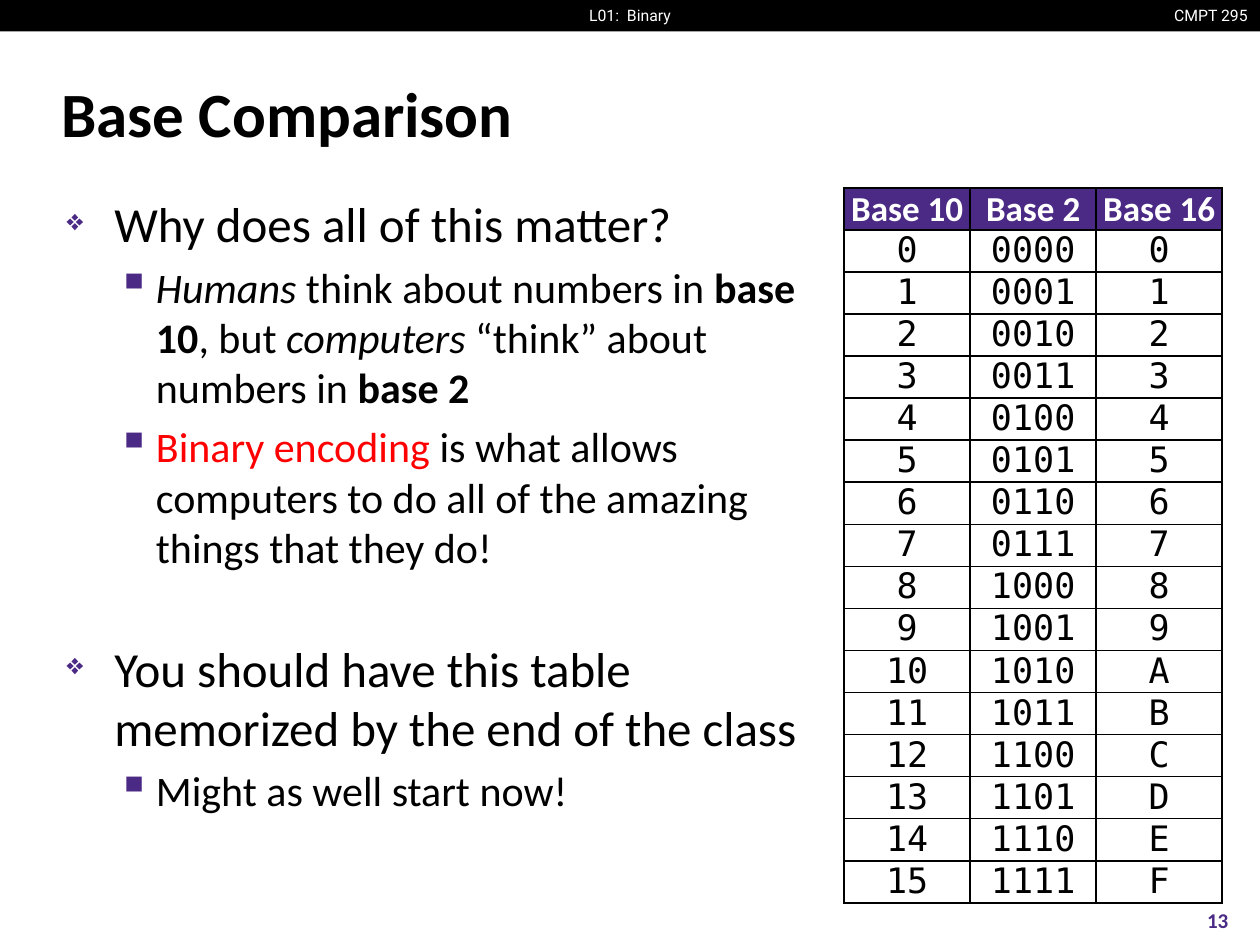
from typing import Any, NamedTuple, Optional

import lxml.etree
import pptx
import pptx.dml.color
import pptx.enum.shapes
import pptx.enum.text
import pptx.oxml.ns
import pptx.util

Inches, Pt = pptx.util.Inches, pptx.util.Pt
ALIGN, ANCHOR = pptx.enum.text.PP_ALIGN, pptx.enum.text.MSO_ANCHOR

PURPLE, BLACK, WHITE, RED = "4B2A85", "000000", "FFFFFF", "FF0000"
HEADER = dict(name="Roboto", size=9, color=WHITE)
TITLE = dict(name="Calibri", size=36, color=BLACK, bold=True)
PAGE = dict(name="Calibri", size=12, color=PURPLE, bold=True)
TABLE_HEAD = dict(name="Calibri", size=20, color=WHITE, bold=True)
TABLE_BODY = dict(name="DejaVu Sans Mono", size=20, color=BLACK, bold=False)
BOLD, ITALIC = dict(bold=True), dict(italic=True)


class Level(NamedTuple):
    margin: float
    hanging: float
    bullet: str
    bullet_pct: int
    size: int


class Item(NamedTuple):
    level: int
    runs: list[tuple[str, dict]]
    gap: Optional[float] = None


class Label(NamedTuple):
    text: str
    box: tuple[float, float, float, float]
    fmt: dict
    align: Any
    anchor: Any
    wrap: bool


LEVELS = [Level(0.38, 0.38, "❖", 60, 28), Level(0.71, 0.31, "▪", 110, 24)]

ITEMS = [
    Item(0, [("Why does all of this matter?", {})]),
    Item(1, [("Humans", ITALIC), (" think about numbers in ", {}),
             ("base 10", BOLD), (", but ", {}), ("computers", ITALIC),
             (" “think” about numbers in ", {}), ("base 2", BOLD)]),
    Item(1, [("Binary encoding ", dict(color=RED)),
             ("is what allows computers to do all of the amazing "
              "things that they do!", {})]),
    Item(0, [("You should have this table memorized by the end of the class",
              {})], gap=38),
    Item(1, [("Might as well start now!", {})]),
]

LABELS = [
    Label("CMPT 295", (9.19, 0, 0.81, 0.25), HEADER, ALIGN.RIGHT,
          ANCHOR.TOP, False),
    Label("L01:  Binary", (4.56, 0, 0.88, 0.25), HEADER, ALIGN.CENTER,
          ANCHOR.TOP, False),
    Label("Base Comparison", (0.39, 0.48, 9.19, 0.83), TITLE, ALIGN.LEFT,
          ANCHOR.MIDDLE, True),
    Label("13", (9.33, 7.1, 0.67, 0.4), PAGE, ALIGN.CENTER,
          ANCHOR.MIDDLE, True),
]


def rgb(value: str) -> pptx.dml.color.RGBColor:
    return pptx.dml.color.RGBColor.from_string(value)


def sub(parent: Any, tag: str, **attrs: Any) -> Any:
    """Append a DrawingML child element."""
    return lxml.etree.SubElement(parent, pptx.oxml.ns.qn(f"a:{tag}"),
                                 {k: str(v) for k, v in attrs.items()})


def add_run(p: Any, text: str, fmt: dict) -> None:
    r = p.add_run()
    r.text = text
    for key, value in fmt.items():
        if key == "color":
            r.font.color.rgb = rgb(value)
        else:
            setattr(r.font, key, Pt(value) if key == "size" else value)


def add_label(s: Any, label: Label) -> None:
    tf = s.shapes.add_textbox(*map(Inches, label.box)).text_frame
    tf.word_wrap, tf.vertical_anchor = label.wrap, label.anchor
    p = tf.paragraphs[0]
    p.alignment = label.align
    add_run(p, label.text, label.fmt)


def format_item(p: Any, item: Item) -> None:
    """Apply indents, spacing and bullet of the item's level."""
    level = LEVELS[item.level]
    p.level = item.level
    pPr = p._p.get_or_add_pPr()
    pPr.set("marL", str(Inches(level.margin)))
    pPr.set("indent", str(Inches(-level.hanging)))
    if item.gap is None:
        sub(sub(pPr, "spcBef"), "spcPct", val=20000)
    else:
        p.space_before = Pt(item.gap)
    sub(sub(pPr, "buClr"), "srgbClr", val=PURPLE)
    sub(pPr, "buSzPct", val=level.bullet_pct * 1000)
    sub(pPr, "buChar", char=level.bullet)


def add_body(s: Any) -> None:
    tf = s.shapes.add_textbox(*map(Inches, (0.43, 1.49, 6.2, 5.44))).text_frame
    tf.word_wrap = True
    for i, item in enumerate(ITEMS):
        p = tf.add_paragraph() if i else tf.paragraphs[0]
        format_item(p, item)
        base = dict(name="Calibri", size=LEVELS[item.level].size, color=BLACK)
        for text, fmt in item.runs:
            add_run(p, text, base | fmt)


def fill_cell(cell: Any, text: str, is_head: bool) -> None:
    margins = dict(margin_left=0.05, margin_right=0.05,
                   margin_top=0, margin_bottom=0)
    for key, value in margins.items():
        setattr(cell, key, Inches(value))
    tcPr = cell._tc.get_or_add_tcPr()
    for side in ("lnL", "lnR", "lnT", "lnB"):
        ln = sub(tcPr, side, w=Pt(1))
        sub(sub(ln, "solidFill"), "srgbClr", val=BLACK)
    if is_head:
        cell.fill.solid()
        cell.fill.fore_color.rgb = rgb(PURPLE)
    else:
        cell.fill.background()
    p = cell.text_frame.paragraphs[0]
    p.alignment = ALIGN.CENTER
    add_run(p, text, TABLE_HEAD if is_head else TABLE_BODY)


def add_base_table(s: Any) -> None:
    rows = [("Base 10", "Base 2", "Base 16")]
    rows += [(f"{n}", f"{n:04b}", f"{n:X}") for n in range(16)]
    frame = s.shapes.add_table(len(rows), 3, Inches(6.7), Inches(1.49),
                               Inches(3), Inches(0.2 * len(rows)))
    frame.table.horz_banding = False
    for i, row in enumerate(rows):
        for j, text in enumerate(row):
            fill_cell(frame.table.cell(i, j), text, i == 0)
    frame.height = Inches(5.67)


def main() -> None:
    prs = pptx.Presentation()
    prs.slide_width, prs.slide_height = Inches(10), Inches(7.5)
    s = prs.slides.add_slide(prs.slide_layouts[6])
    bar = s.shapes.add_shape(pptx.enum.shapes.MSO_SHAPE.RECTANGLE,
                             0, 0, Inches(10), Inches(0.25))
    bar.shadow.inherit = False
    bar.fill.solid()
    bar.fill.fore_color.rgb = rgb(BLACK)
    bar.line.fill.background()
    for label in LABELS:
        add_label(s, label)
    add_body(s)
    add_base_table(s)
    prs.save("out.pptx")


if __name__ == "__main__":
    main()
